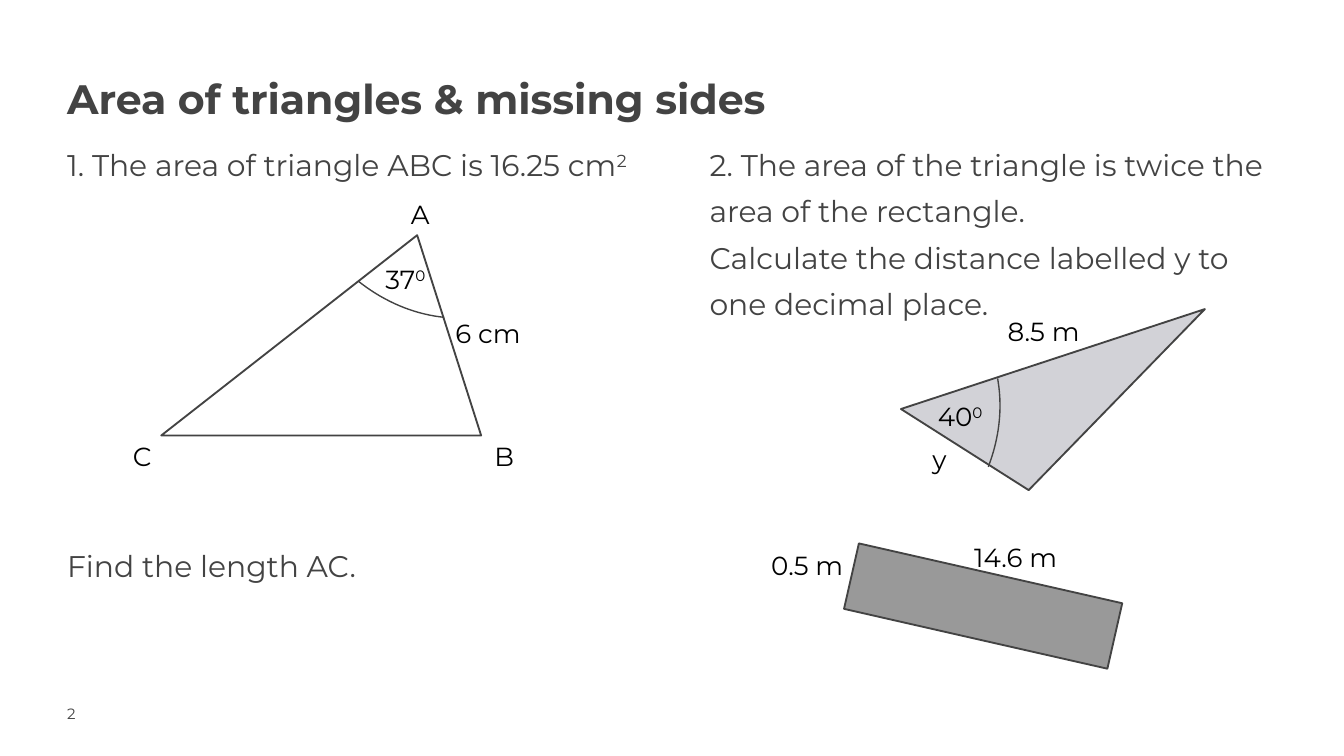
from dataclasses import dataclass
from typing import Optional

from pptx import Presentation
from pptx.dml.color import RGBColor
from pptx.enum.shapes import MSO_SHAPE
from pptx.util import Inches, Pt

TRIANGLE = MSO_SHAPE.ISOSCELES_TRIANGLE
RECTANGLE = MSO_SHAPE.RECTANGLE
ARC = MSO_SHAPE.ARC

FONT = "Montserrat"
BLACK = RGBColor(0x00, 0x00, 0x00)
GREY = RGBColor(0x43, 0x43, 0x43)
WHITE = RGBColor(0xFF, 0xFF, 0xFF)
LIGHT = RGBColor(0xD2, 0xD2, 0xD7)
MID = RGBColor(0x99, 0x99, 0x99)


@dataclass
class Para:
    text: str
    sup: str = ""
    before: float = 0


@dataclass
class Block:
    left: float
    top: float
    width: float
    height: float
    paras: list[Para]
    size: float
    spacing: float = 1.0
    bold: bool = False
    color: RGBColor = GREY
    margins: tuple[float, float] = (0, 0)


@dataclass
class Figure:
    kind: int
    left: float
    top: float
    width: float
    height: float
    adjust: tuple[float, ...] = ()
    rotation: float = 0
    fill: Optional[RGBColor] = None
    line: float = 1


def label(left: float, top: float, text: str, sup: str = "", width: float = 0.8) -> Block:
    return Block(left, top, width, 0.34, [Para(text, sup)], 14,
                 color=BLACK, margins=(0.1, 0.05))


def add_block(shapes, b: Block) -> None:
    s = shapes.add_textbox(Inches(b.left), Inches(b.top), Inches(b.width), Inches(b.height))
    tf = s.text_frame
    tf.word_wrap = True
    tf.margin_left = tf.margin_right = Inches(b.margins[0])
    tf.margin_top = tf.margin_bottom = Inches(b.margins[1])
    for i, para in enumerate(b.paras):
        p = tf.paragraphs[0] if i == 0 else tf.add_paragraph()
        p.line_spacing = b.spacing
        p.space_before = Pt(para.before)
        for text, raised in ((para.text, False), (para.sup, True)):
            if not text:
                continue
            r = p.add_run()
            r.text = text
            r.font.name = FONT
            r.font.size = Pt(b.size)
            r.font.bold = b.bold
            r.font.color.rgb = b.color
            if raised:
                r._r.get_or_add_rPr().set("baseline", "30000")


def add_figure(shapes, f: Figure) -> None:
    s = shapes.add_shape(f.kind, Inches(f.left), Inches(f.top),
                         Inches(f.width), Inches(f.height))
    s.shadow.inherit = False
    s.rotation = f.rotation
    for i, value in enumerate(f.adjust):
        s.adjustments[i] = value
    if f.fill is None:
        s.fill.background()
    else:
        s.fill.solid()
        s.fill.fore_color.rgb = f.fill
    s.line.color.rgb = GREY
    s.line.width = Pt(f.line)


def draw(shapes, items: list) -> None:
    for item in items:
        if isinstance(item, Figure):
            add_figure(shapes, item)
        else:
            add_block(shapes, item)


# Title, both questions and slide number
TEXTS = [
    Block(0.5, 0.49, 7.37, 0.52, [Para("Area of triangles & missing sides")],
          22, 1.15, bold=True),
    Block(0.5, 1.01, 4.26, 4.61,
          [Para("1. The area of triangle ABC is 16.25 cm", "2"),
           Para("Find the length AC.", before=190)], 16, 1.3),
    Block(0.5, 5.24, 0.79, 0.2, [Para("2")], 8),
    Block(5.28, 1.01, 4.17, 4.61,
          [Para("2. The area of the triangle is twice the area of the rectangle."),
           Para("Calculate the distance labelled y to one decimal place.")], 16, 1.3),
]

# Question 1: triangle ABC
TRIANGLE_ABC = [
    Figure(TRIANGLE, 1.2, 1.75, 2.38, 1.49, (0.8,), fill=WHITE),
    Figure(ARC, 2.15, -0.21, 2.25, 2.61, (177.05, 196.58), 153.6, line=0.75),
    label(2.77, 1.91, "37", "0"),
    label(2.96, 1.43, "A"),
    label(0.89, 3.23, "C"),
    label(3.58, 3.23, "B"),
    label(3.29, 2.31, "6 cm"),
]

# Question 2: shaded triangle, grouped with its angle and side
SHADED_TRIANGLE = [
    Figure(TRIANGLE, 6.78, 2.65, 2.38, 0.87, (0.7,), 161.8, LIGHT),
    label(7.4, 2.3, "8.5 m"),
    label(6.88, 2.93, "40", "0"),
    Figure(ARC, 5.09, 1.89, 2.25, 2.61, (177.05, 195.77), 47.5, line=0.75),
]

# Question 2: unknown side and rectangle
RECTANGLE_PART = [
    label(6.84, 3.25, "y"),
    Figure(RECTANGLE, 6.31, 4.26, 2.01, 0.5, rotation=12.8, fill=MID),
    label(7.15, 3.98, "14.6 m", width=0.97),
    label(5.64, 4.04, "0.5 m", width=0.97),
]


def main() -> None:
    prs = Presentation()
    # Widescreen 16:9
    prs.slide_width, prs.slide_height = Inches(10), Inches(10 * 9 / 16)
    slide = prs.slides.add_slide(prs.slide_layouts[6])
    draw(slide.shapes, TEXTS + TRIANGLE_ABC)
    draw(slide.shapes.add_group_shape().shapes, SHADED_TRIANGLE)
    draw(slide.shapes, RECTANGLE_PART)
    prs.save("out.pptx")


if __name__ == "__main__":
    main()
